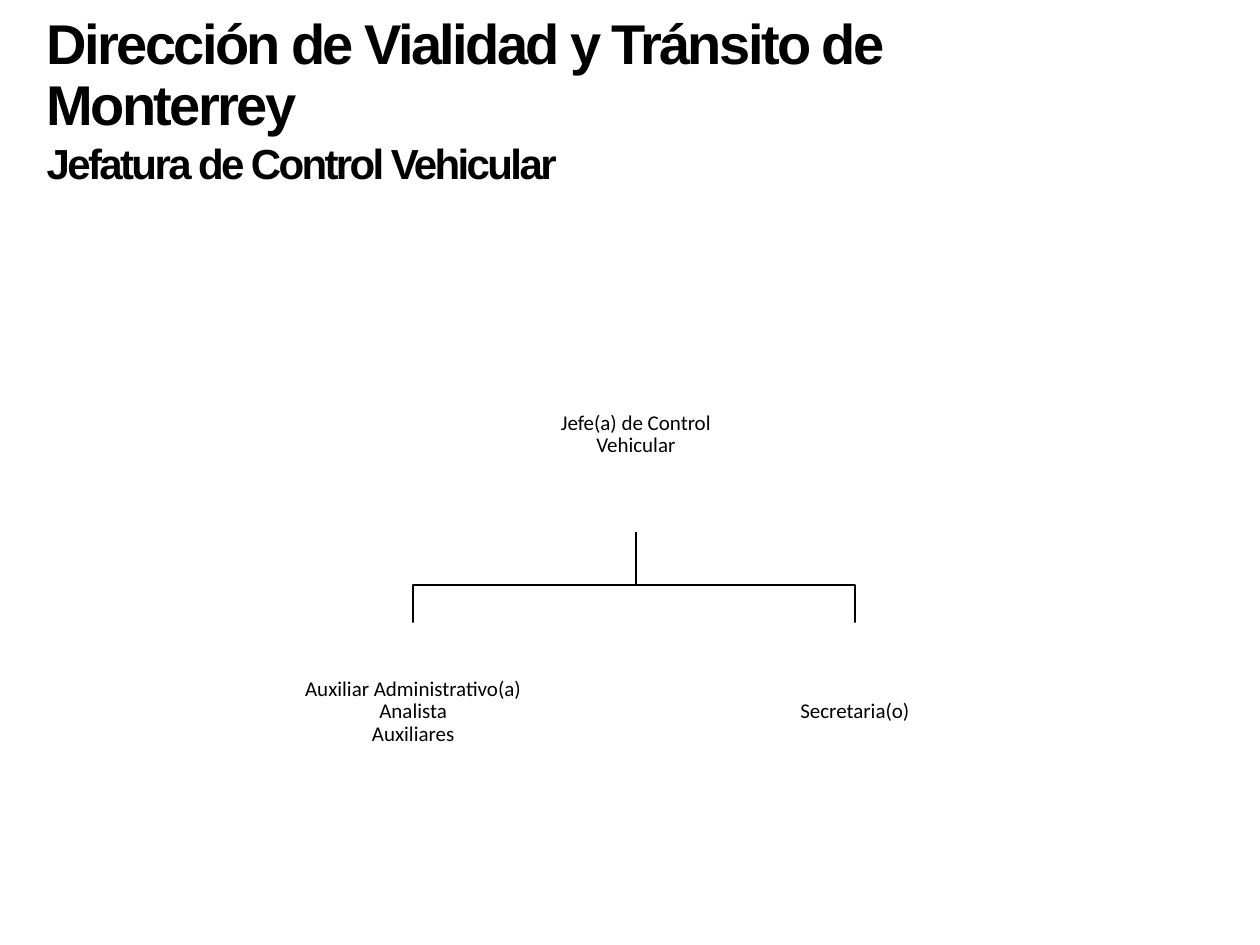
"""Build the organisation chart slide of the vehicle control office."""
from dataclasses import dataclass

from pptx import Presentation
from pptx.dml.color import RGBColor
from pptx.enum.shapes import MSO_SHAPE
from pptx.enum.text import MSO_ANCHOR, PP_ALIGN
from pptx.slide import Slide
from pptx.text.text import _Paragraph
from pptx.util import Cm, Pt


@dataclass(frozen=True)
class Theme:
    ink: RGBColor = RGBColor(0, 0, 0)
    paper: RGBColor = RGBColor(255, 255, 255)
    title_font: str = "Arial"
    body_font: str = "Calibri"
    title_size: float = 32
    subtitle_size: float = 24
    body_size: float = 12
    title_tracking: int = -150
    line_width: float = 1
    line_spacing: float = 0.9


@dataclass(frozen=True)
class Position:
    lines: tuple[str, ...]
    left: float
    top: float
    width: float
    height: float

    @property
    def center(self) -> float:
        return self.left + self.width / 2

    @property
    def bottom(self) -> float:
        return self.top + self.height


THEME = Theme()
CHIEF = Position(("Jefe(a) de Control", "Vehicular"), 8.97, 6.81, 7.7, 3.91)
STAFF = (
    Position(("Auxiliar Administrativo(a)", "Analista\vAuxiliares"), 4.67, 12.55, 7.32, 3.61),
    Position(("Secretaria(o)",), 13.54, 12.55, 7.39, 3.61),
)
BRANCH_DROP = 1.07


def style_paragraph(paragraph: _Paragraph, text: str, font: str, size: float) -> None:
    """Write the text of a paragraph and set its font."""
    paragraph.text = text
    paragraph.font.name = font
    paragraph.font.size = Pt(size)
    paragraph.font.color.rgb = THEME.ink


def add_branch(slide: Slide, parent: Position, child: Position) -> None:
    """Draw the elbow line from a parent down to a child."""
    elbow = parent.bottom + BRANCH_DROP
    builder = slide.shapes.build_freeform(Cm(parent.center), Cm(parent.bottom))
    points = ((parent.center, elbow), (child.center, elbow), (child.center, child.top))
    builder.add_line_segments([(Cm(x), Cm(y)) for x, y in points], close=False)
    shape = builder.convert_to_shape()
    shape.shadow.inherit = False
    shape.fill.background()
    shape.line.color.rgb = THEME.ink
    shape.line.width = Pt(THEME.line_width)


def add_position(slide: Slide, position: Position) -> None:
    """Draw a borderless box with centred text."""
    shape = slide.shapes.add_shape(
        MSO_SHAPE.RECTANGLE,
        Cm(position.left), Cm(position.top), Cm(position.width), Cm(position.height),
    )
    shape.shadow.inherit = False
    shape.fill.solid()
    shape.fill.fore_color.rgb = THEME.paper
    shape.line.fill.background()
    frame = shape.text_frame
    frame.word_wrap = True
    frame.vertical_anchor = MSO_ANCHOR.MIDDLE
    frame.margin_left = frame.margin_right = Cm(0.03)
    frame.margin_top = frame.margin_bottom = Cm(0.03)
    for index, line in enumerate(position.lines):
        paragraph = frame.add_paragraph() if index else frame.paragraphs[0]
        style_paragraph(paragraph, line, THEME.body_font, THEME.body_size)
        paragraph.alignment = PP_ALIGN.CENTER
        paragraph.line_spacing = THEME.line_spacing


def add_title(slide: Slide) -> None:
    """Write the title and subtitle in tight bold type."""
    frame = slide.shapes.add_textbox(Cm(0.69), Cm(0.2), Cm(18.95), Cm(3.73)).text_frame
    frame.word_wrap = True
    title, subtitle = frame.paragraphs[0], frame.add_paragraph()
    style_paragraph(
        title, "Dirección de Vialidad y Tránsito de Monterrey", THEME.title_font, THEME.title_size
    )
    title.line_spacing = THEME.line_spacing
    style_paragraph(
        subtitle, "Jefatura de Control Vehicular", THEME.title_font, THEME.subtitle_size
    )
    for paragraph in (title, subtitle):
        paragraph.font.bold = True
        paragraph.font._rPr.set("spc", str(THEME.title_tracking))


def main() -> None:
    """Create and save the presentation."""
    presentation = Presentation()
    presentation.slide_width = Cm(25.4)
    presentation.slide_height = Cm(19.05)
    slide = presentation.slides.add_slide(presentation.slide_layouts[6])
    for position in reversed(STAFF):
        add_branch(slide, CHIEF, position)
    for position in (CHIEF, *STAFF):
        add_position(slide, position)
    add_title(slide)
    presentation.save("out.pptx")


if __name__ == "__main__":
    main()
